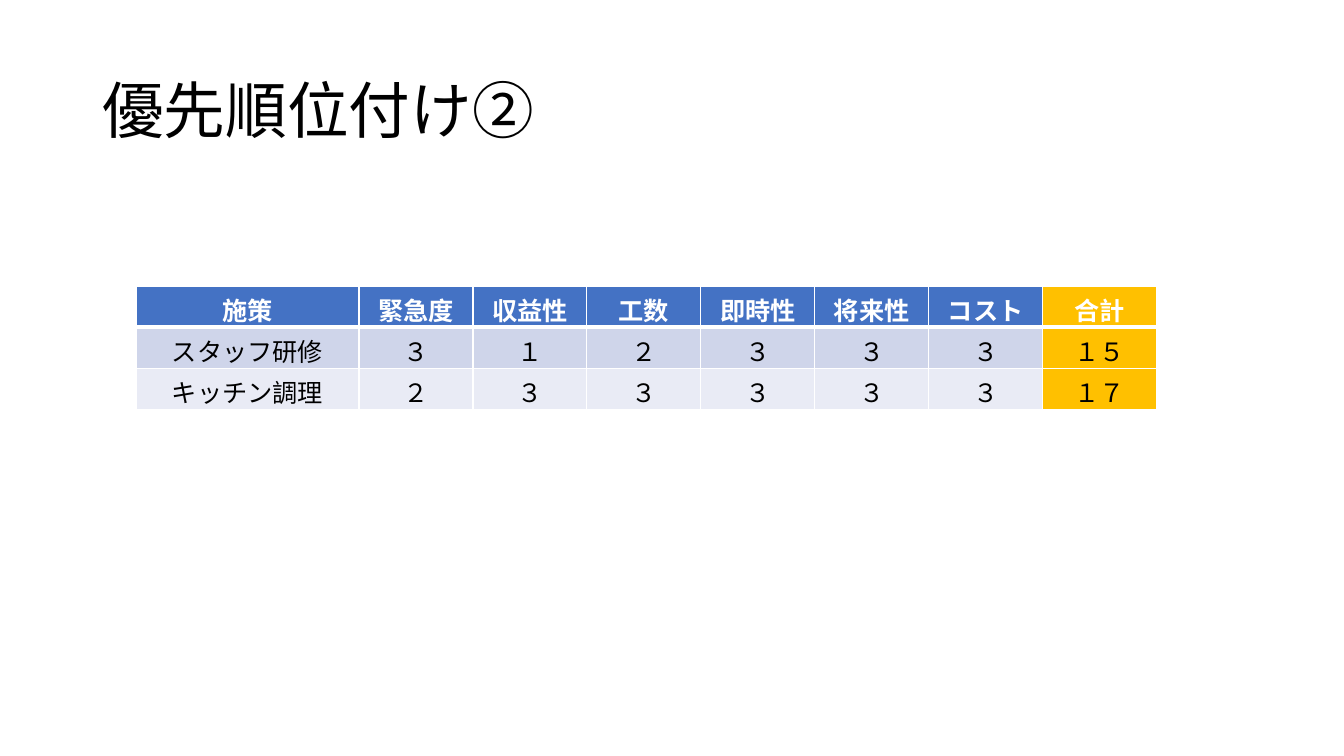
from lxml.etree import SubElement
from pptx import Presentation
from pptx.dml.color import RGBColor
from pptx.enum.text import MSO_ANCHOR as Anchor, PP_ALIGN as Align
from pptx.oxml.ns import qn
from pptx.util import Inches, Pt

FONT = "Noto Sans CJK JP"
BLACK, WHITE = "000000", "FFFFFF"
HEADER, BANDS, TOTAL = "4472C4", ("CFD5EA", "E9EBF5"), "FFC000"
SCORES = [
    ("施策", "緊急度", "収益性", "工数", "即時性", "将来性", "コスト", "合計"),
    ("スタッフ研修", "３", "１", "２", "３", "３", "３", "１５"),
    ("キッチン調理", "２", "３", "３", "３", "３", "３", "１７"),
]


def color(value):
    return RGBColor.from_string(value)


class SlideBuilder:
    """Draws styled elements on one slide, with lengths in percent of its size."""

    def __init__(self, presentation):
        self.width = presentation.slide_width
        self.height = presentation.slide_height
        self.slide = presentation.slides.add_slide(presentation.slide_layouts[6])

    def across(self, share):
        return round(self.width * share / 100)

    def down(self, share):
        return round(self.height * share / 100)

    def box(self, left, top, width, height):
        return self.across(left), self.down(top), self.across(width), self.down(height)

    def run(self, paragraph, text, size, font_color, bold=False):
        run = paragraph.add_run()
        run.text = text
        run.font.size = Pt(size)
        run.font.bold = bold
        run.font.color.rgb = color(font_color)
        run.font.name = FONT
        SubElement(run.font._element, qn("a:ea"), typeface=FONT)

    def title(self, text, *place):
        frame = self.slide.shapes.add_textbox(*self.box(*place)).text_frame
        frame.word_wrap = True
        frame.vertical_anchor = Anchor.MIDDLE
        paragraph = frame.paragraphs[0]
        paragraph.line_spacing = 0.9
        self.run(paragraph, text, 44, BLACK)

    def border(self, cell, side, points):
        properties = cell._tc.get_or_add_tcPr()
        line = SubElement(properties, qn(f"a:ln{side}"), w=str(Pt(points)))
        fill = SubElement(line, qn("a:solidFill"))
        SubElement(fill, qn("a:srgbClr"), val=WHITE)

    def cell(self, cell, text, row, is_label, is_total):
        is_header = row == 0
        if not is_label:
            cell.vertical_anchor = Anchor.MIDDLE
        for side in "LRTB":
            is_thick = (row, side) in ((0, "B"), (1, "T"))
            self.border(cell, side, 3 if is_thick else 1)
        cell.fill.solid()
        band = HEADER if is_header else BANDS[(row - 1) % 2]
        cell.fill.fore_color.rgb = color(TOTAL if is_total else band)
        paragraph = cell.text_frame.paragraphs[0]
        paragraph.alignment = Align.CENTER
        self.run(paragraph, text, 18, WHITE if is_header else BLACK, is_header)

    def table(self, rows, left, top, widths, row_height):
        place = self.box(left, top, sum(widths), row_height * len(rows))
        table = self.slide.shapes.add_table(len(rows), len(widths), *place).table
        for column, width in zip(table.columns, widths):
            column.width = self.across(width)
        last = len(widths) - 1
        for row, texts in enumerate(rows):
            table.rows[row].height = self.down(row_height)
            for column, text in enumerate(texts):
                self.cell(table.cell(row, column), text, row, column == 0, column == last)


def main():
    presentation = Presentation()
    presentation.slide_width = Inches(13.33)
    presentation.slide_height = Inches(7.5)
    builder = SlideBuilder(presentation)
    builder.title("優先順位付け②", 6.88, 5.33, 86.25, 19.33)
    builder.table(SCORES, 10.13, 37.87, [16.58] + [8.48] * 7, 5.43)
    presentation.save("out.pptx")


if __name__ == "__main__":
    main()
